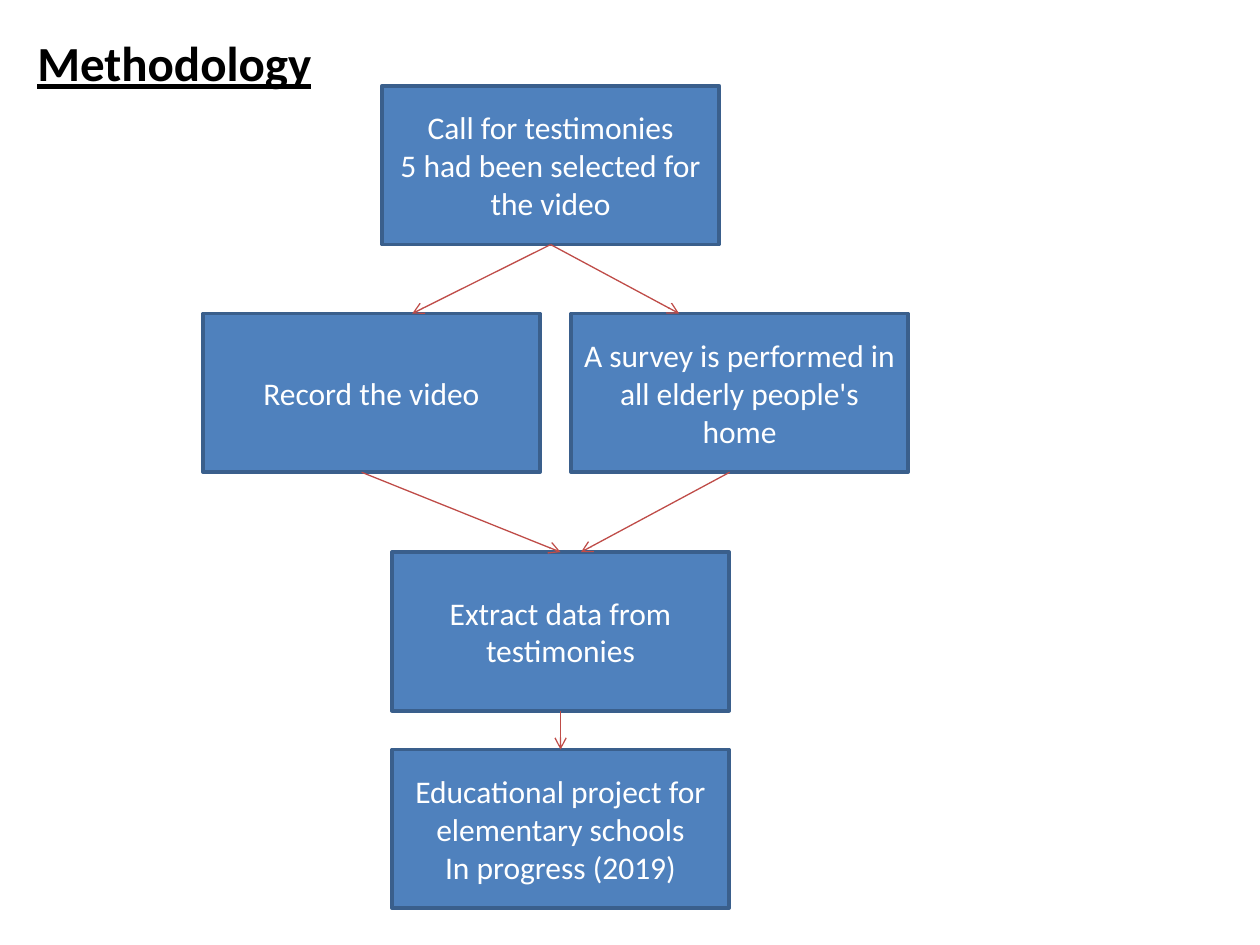
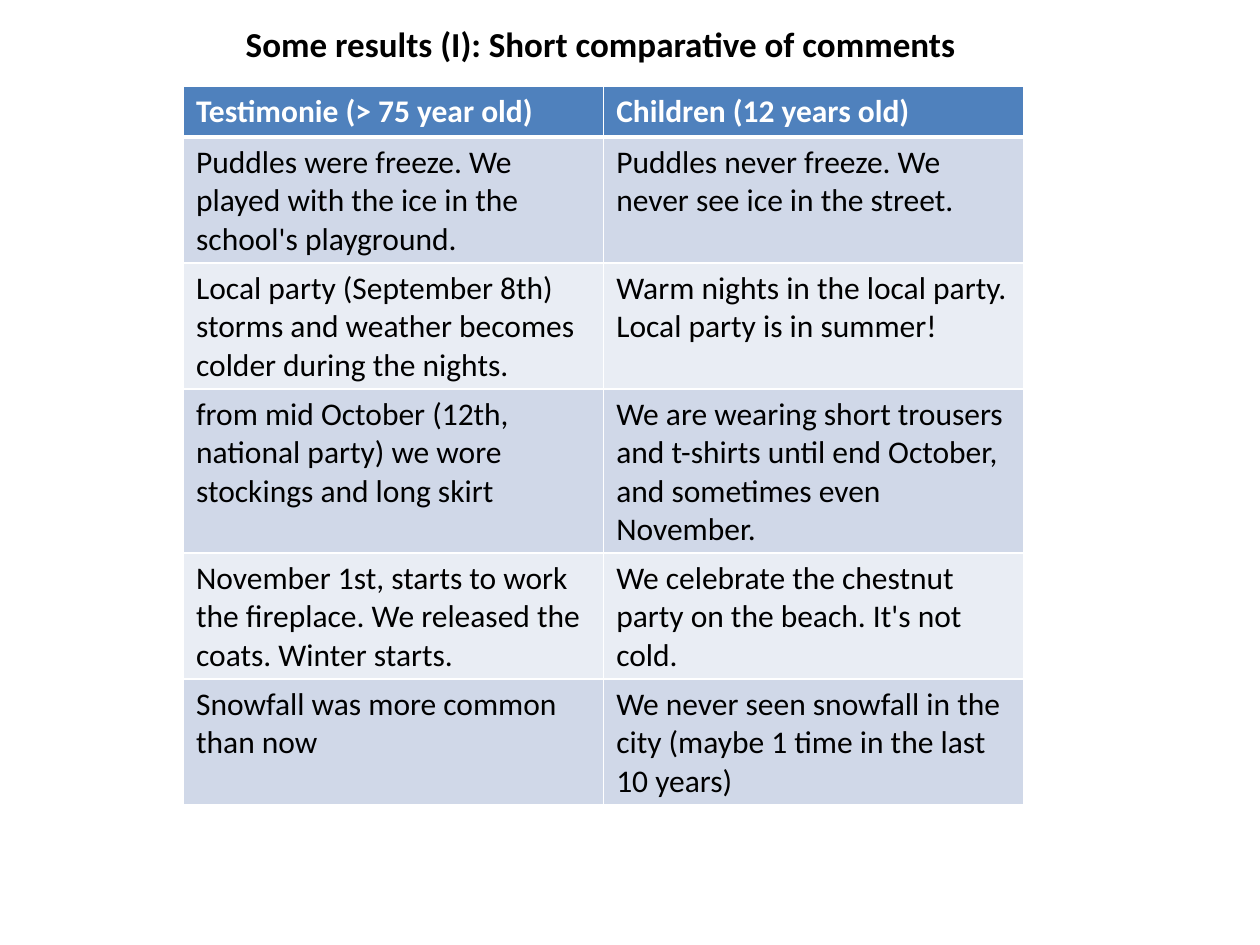
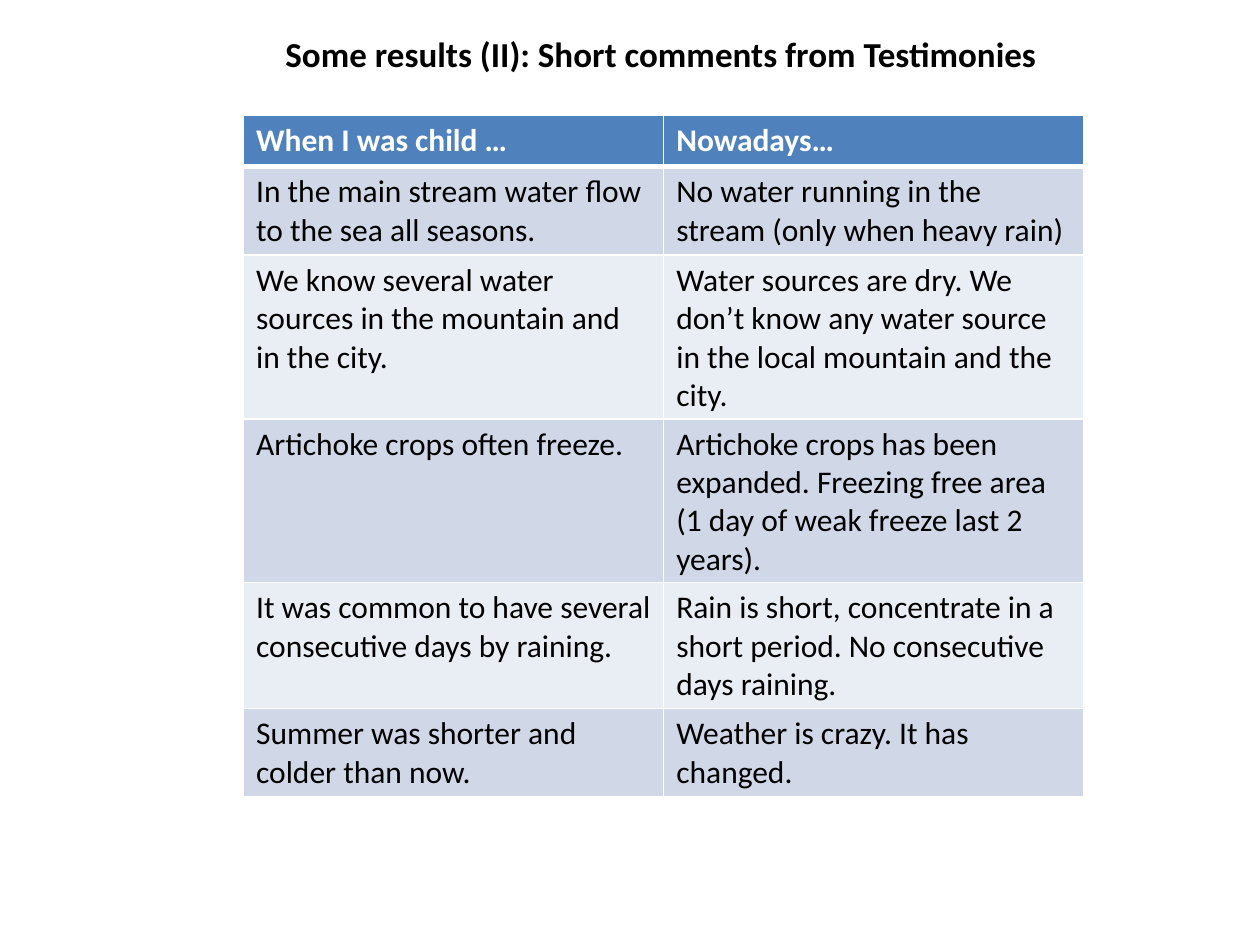
"""Build three slides: a methodology flow chart and two comparison tables."""
from lxml.etree import SubElement
from pptx import Presentation
from pptx.dml.color import RGBColor
from pptx.enum.shapes import MSO_CONNECTOR as CONNECTOR, MSO_SHAPE as SHAPE
from pptx.enum.text import MSO_ANCHOR as ANCHOR, MSO_AUTO_SIZE as AUTO, PP_ALIGN as ALIGN
from pptx.oxml import parse_xml
from pptx.oxml.ns import nsdecls, qn
from pptx.util import Cm, Pt


def rgb(value):
    return RGBColor.from_string(value)


class Deck:
    FONT = "Calibri"
    BLACK, WHITE = "000000", "FFFFFF"
    BLUE, EDGE, ARROW = "4F81BD", "3A5F8C", "BF4C48"
    BANDS = ("E9EDF4", "D0D8E8")
    TITLE_ONLY = 5
    BODY = 18
    BOX_W, BOX_H = 6.8, 3.2
    COL_W, ROW_H = 8.47, 1.03

    def __init__(self):
        self.prs = Presentation()
        self.prs.slide_width, self.prs.slide_height = Cm(25.4), Cm(19.05)
        self.slide = None

    def style(self, tf, size, color, bold=False, underline=None, align=ALIGN.LEFT):
        for p in tf.paragraphs:
            p.alignment = align
            for r in p.runs:
                font = r.font
                font.name, font.size, font.bold = self.FONT, Pt(size), bold
                font.underline = underline
                font.color.rgb = rgb(color)

    def add_slide(self, title, left, top, width, height, size=20, underline=None):
        self.slide = self.prs.slides.add_slide(self.prs.slide_layouts[self.TITLE_ONLY])
        sp = self.slide.shapes.title
        sp.left, sp.top, sp.width, sp.height = Cm(left), Cm(top), Cm(width), Cm(height)
        tf = sp.text_frame
        tf.text = title
        tf.word_wrap = False
        tf.auto_size = AUTO.SHAPE_TO_FIT_TEXT
        tf.vertical_anchor = ANCHOR.TOP
        self.style(tf, size, self.BLACK, True, underline)

    def box(self, text, left, top):
        sp = self.slide.shapes.add_shape(
            SHAPE.RECTANGLE, Cm(left), Cm(top), Cm(self.BOX_W), Cm(self.BOX_H))
        sp.shadow.inherit = False
        sp.fill.solid()
        sp.fill.fore_color.rgb = rgb(self.BLUE)
        sp.line.color.rgb = rgb(self.EDGE)
        sp.line.width = Pt(2)
        tf = sp.text_frame
        tf.text = text
        tf.vertical_anchor = ANCHOR.MIDDLE
        self.style(tf, self.BODY, self.WHITE, align=ALIGN.CENTER)
        return sp

    def arrow(self, begin, end):
        c = self.slide.shapes.add_connector(CONNECTOR.STRAIGHT, 0, 0, 0, 0)
        if isinstance(begin, tuple):
            c.begin_x, c.begin_y = map(Cm, begin)
        else:
            c.begin_connect(begin, 2)
        if isinstance(end, tuple):
            c.end_x, c.end_y = map(Cm, end)
        else:
            c.end_connect(end, 0)
        c.line.color.rgb = rgb(self.ARROW)
        c.line.width = Pt(0.75)
        SubElement(c.line._get_or_add_ln(), qn("a:tailEnd"), type="arrow")
        SubElement(c._element.spPr, qn("a:effectLst"))

    def borders(self, cell, top, bottom):
        tcPr = cell._tc.get_or_add_tcPr()
        sides = (("lnL", 1), ("lnR", 1), ("lnT", top), ("lnB", bottom))
        for i, (side, width) in enumerate(sides):
            tcPr.insert(i, parse_xml(
                f'<a:{side} {nsdecls("a")} w="{Pt(width)}"><a:solidFill>'
                f'<a:srgbClr val="{self.WHITE}"/></a:solidFill></a:{side}>'))

    def table(self, rows, left, top):
        cols = len(rows[0])
        table = self.slide.shapes.add_table(
            len(rows), cols, Cm(left), Cm(top),
            Cm(self.COL_W * cols), Cm(self.ROW_H * len(rows))).table
        for i, row in enumerate(rows):
            header = i == 0
            for j, text in enumerate(row):
                cell = table.cell(i, j)
                cell.text = text
                cell.fill.solid()
                cell.fill.fore_color.rgb = rgb(self.BLUE if header else self.BANDS[i % 2])
                self.style(cell.text_frame, self.BODY,
                           self.WHITE if header else self.BLACK, header)
                self.borders(cell, 3 if i == 1 else 1, 3 if header else 1)


def methodology(deck):
    deck.add_slide("Methodology", 0.5, 0.53, 6.1, 1.45, 28, True)
    middle, branch_top, extract_top = 7.9, 6.32, 11.13
    branch_bottom = branch_top + deck.BOX_H
    call = deck.box("Call for testimonies\n5 had been selected for the video", 7.7, 1.73)
    deck.box("Record the video", 4.09, branch_top)
    deck.box("A survey is performed in all elderly people's home", 11.51, branch_top)
    extract = deck.box("Extract data from testimonies", middle, extract_top)
    project = deck.box(
        "Educational project for elementary schools\nIn progress (2019)", middle, 15.11)
    deck.arrow(call, (8.31, branch_top))
    deck.arrow(call, (13.69, branch_top))
    deck.arrow((7.29, branch_bottom), extract)
    deck.arrow((14.71, branch_bottom), (11.71, extract_top))
    deck.arrow(extract, project)


def generations(deck):
    deck.add_slide("Some results (I): Short comparative of comments", 4.7, 0.33, 15.11, 1.11)
    deck.table([
        ("Testimonie (> 75 year old)", "Children (12 years old)"),
        ("Puddles were freeze. We played with the ice in the school's playground.",
         "Puddles never freeze. We never see ice in the street."),
        ("Local party (September 8th) storms and weather becomes colder during the nights.",
         "Warm nights in the local party. Local party is in summer!"),
        ("from mid October (12th, national party) we wore stockings and long skirt",
         "We are wearing short trousers and t-shirts until end October, "
         "and sometimes even November."),
        ("November 1st, starts to work the fireplace. We released the coats. Winter starts.",
         "We celebrate the chestnut party on the beach. It's not cold."),
        ("Snowfall was more common than now",
         "We never seen snowfall in the city (maybe 1 time in the last 10 years)"),
    ], 3.7, 1.73)


def then_and_now(deck):
    deck.add_slide("Some results (II): Short comments from Testimonies", 5.5, 0.53, 15.8, 1.11)
    deck.table([
        ("When I was child …", "Nowadays…"),
        ("In the main stream water flow to the sea all seasons.",
         "No water running in the stream (only when heavy rain)"),
        ("We know several water sources in the mountain and in the city.",
         "Water sources are dry. We don’t know any water source "
         "in the local mountain and the city."),
        ("Artichoke crops often freeze.",
         "Artichoke crops has been expanded. Freezing free area "
         "(1 day of weak freeze last 2 years)."),
        ("It was common to have several consecutive days by raining.",
         "Rain is short, concentrate in a short period. No consecutive days raining."),
        ("Summer was shorter and colder than now.",
         "Weather is crazy. It has changed."),
    ], 4.91, 2.33)


def main():
    deck = Deck()
    methodology(deck)
    generations(deck)
    then_and_now(deck)
    deck.prs.save("out.pptx")


if __name__ == "__main__":
    main()
